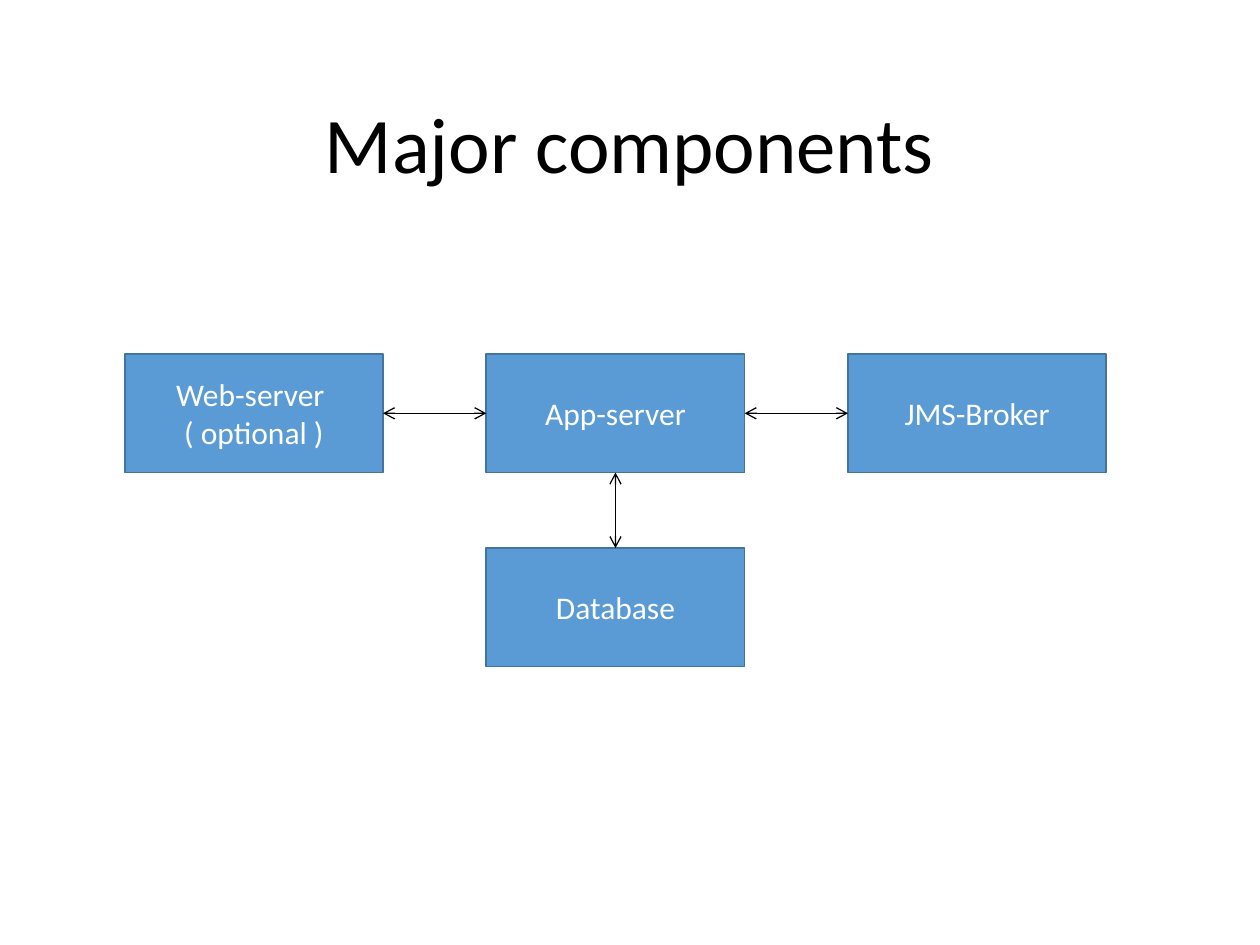
from pptx import Presentation
from pptx.dml.color import RGBColor
from pptx.enum.shapes import MSO_CONNECTOR as Connector, MSO_SHAPE as Shape
from pptx.enum.text import MSO_ANCHOR as Anchor, PP_ALIGN as Align
from pptx.oxml.ns import qn
from pptx.util import Inches, Pt
from lxml.etree import SubElement

BLUE = RGBColor(0x5B, 0x9B, 0xD5)
DARK_BLUE = RGBColor(0x43, 0x73, 0x9E)
WHITE = RGBColor(0xFF, 0xFF, 0xFF)
BLACK = RGBColor(0x00, 0x00, 0x00)

# Connection sites of a rectangle
TOP, LEFT, BOTTOM, RIGHT = range(4)


class Diagram:
    """Slide with component boxes on a grid, joined by arrows."""

    font = "Calibri"
    origin_x, origin_y = 0.99, 2.81
    column_step, row_step = 2.87, 1.54
    box_width, box_height = 2.05, 0.94

    def __init__(self, slide):
        self.shapes = slide.shapes

    def set_text(self, frame, text, size, color, anchor, spacing=None):
        frame.word_wrap = True
        frame.vertical_anchor = anchor
        frame.text = text
        for paragraph in frame.paragraphs:
            paragraph.alignment = Align.CENTER
            paragraph.line_spacing = spacing
            for run in paragraph.runs:
                run.font.name = self.font
                run.font.size = Pt(size)
                run.font.color.rgb = color

    def title(self, text):
        heading = self.shapes.add_textbox(
            Inches(0.35), Inches(0.5), Inches(9.29), Inches(1.06))
        self.set_text(heading.text_frame, text, 45, BLACK, Anchor.BOTTOM, 0.9)

    def component(self, text, column, row):
        box = self.shapes.add_shape(
            Shape.RECTANGLE,
            Inches(self.origin_x + column * self.column_step),
            Inches(self.origin_y + row * self.row_step),
            Inches(self.box_width), Inches(self.box_height))
        box.shadow.inherit = False
        box.fill.solid()
        box.fill.fore_color.rgb = BLUE
        box.line.color.rgb = DARK_BLUE
        box.line.width = Pt(1)
        self.set_text(box.text_frame, text, 18, WHITE, Anchor.MIDDLE)
        return box

    def link(self, start, start_site, end, end_site):
        arrow = self.shapes.add_connector(Connector.STRAIGHT, 0, 0, 0, 0)
        arrow.begin_connect(start, start_site)
        arrow.end_connect(end, end_site)
        arrow.line.color.rgb = BLACK
        arrow.line.width = Pt(0.75)
        # Open arrowheads at both ends, no shadow
        properties = arrow._element.spPr
        outline = properties.find(qn("a:ln"))
        for end_tag in ("a:headEnd", "a:tailEnd"):
            SubElement(outline, qn(end_tag), type="arrow")
        SubElement(properties, qn("a:effectLst"))


def main():
    deck = Presentation()
    deck.slide_width, deck.slide_height = Inches(10), Inches(7.5)
    diagram = Diagram(deck.slides.add_slide(deck.slide_layouts[6]))

    diagram.title("Major components")

    # Components by column and row
    web_server = diagram.component("Web-server \n( optional )", 0, 0)
    app_server = diagram.component("App-server", 1, 0)
    broker = diagram.component("JMS-Broker", 2, 0)
    database = diagram.component("Database", 1, 1)

    # Two-way links
    diagram.link(web_server, RIGHT, app_server, LEFT)
    diagram.link(app_server, RIGHT, broker, LEFT)
    diagram.link(database, TOP, app_server, BOTTOM)

    deck.save("out.pptx")


if __name__ == "__main__":
    main()
